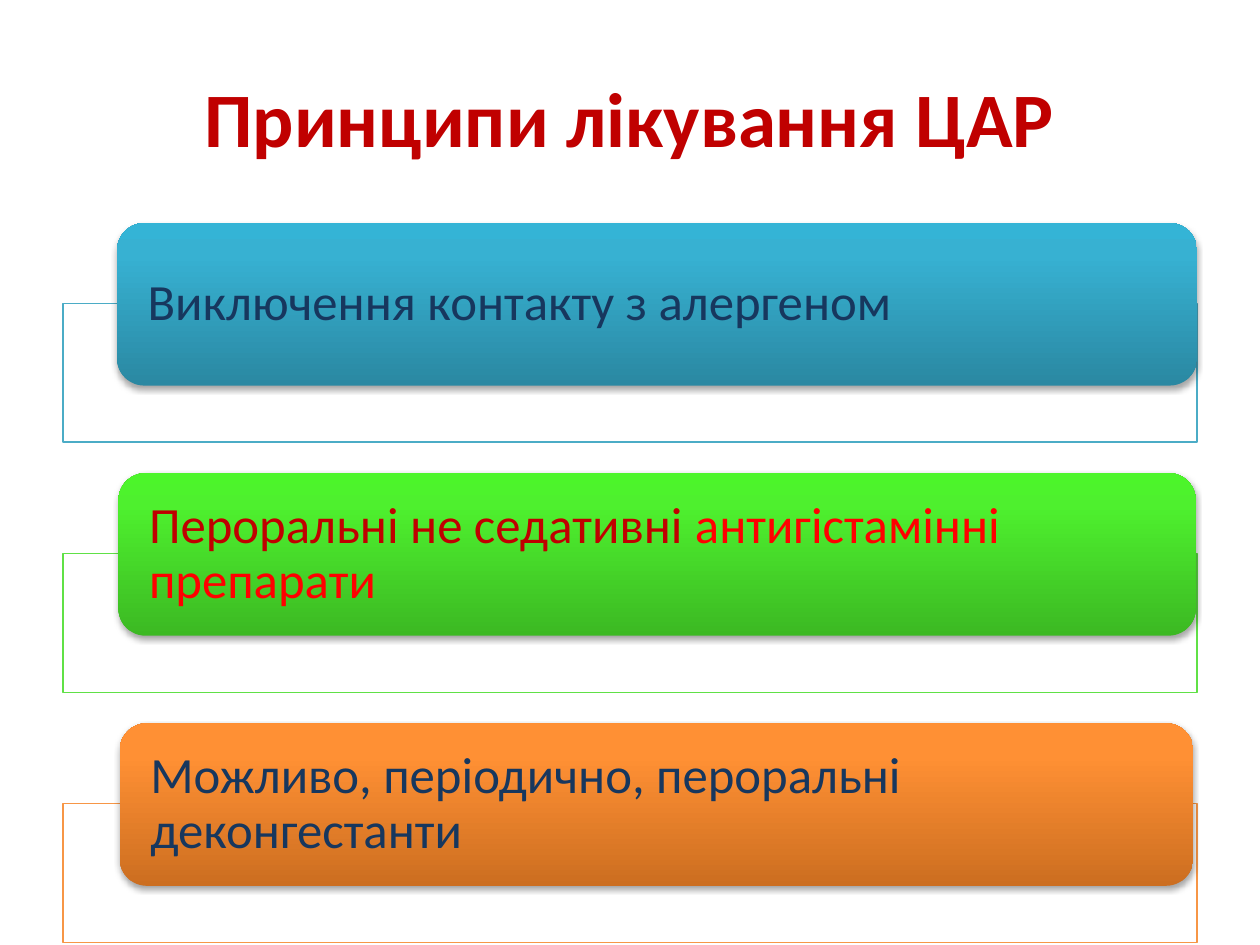
from copy import deepcopy

from lxml.etree import SubElement
from pptx import Presentation
from pptx.dml.color import RGBColor as Rgb
from pptx.enum.shapes import MSO_SHAPE as Shape
from pptx.enum.text import MSO_ANCHOR as Anchor, PP_ALIGN as Align
from pptx.oxml.ns import qn
from pptx.util import Inches, Pt

COLORS = {
    "white": "FFFFFF",
    "black": "000000",
    "crimson": "C00000",
    "red": "FF0000",
    "navy": "17375E",
}
FONT = "Calibri"
MARGIN = 0.5
CONTENT_WIDTH = 9
FIRST_FRAME_TOP = 2.41
ROW_PITCH = 1.985
FRAME_HEIGHT = 1.1
CARD_RISE = 0.64
CARD_HEIGHT = 1.29
STOP_POSITIONS = (0, 0.8, 1)

PRINCIPLES = [
    (0.93, 8.57, "4BACC6", ("2A88A2", "37B1D2", "34B4D6"),
     [("Виключення контакту з алергеном", "navy")]),
    (0.94, 8.55, "60E146", ("3CB923", "4EF02E", "4CF52A"),
     [("Пероральні не седативні ", "crimson"), ("антигістамінні препарати", "red")]),
    (0.95, 8.52, "F79646", ("CC6E20", "FF9034", "FF9136"),
     [("Можливо, періодично, пероральні деконгестанти", "navy")]),
]


def format_run(run, size, color, bold=False):
    run.font.name = FONT
    run.font.size = Pt(size)
    run.font.bold = bold
    run.font.color.rgb = Rgb.from_string(COLORS[color])


def set_title(slide, text):
    title = slide.shapes.title
    title.left, title.top = Inches(MARGIN), Inches(0.3)
    title.width, title.height = Inches(CONTENT_WIDTH), Inches(1.25)
    title.text_frame.text = text
    title.text_frame.vertical_anchor = Anchor.MIDDLE
    paragraph = title.text_frame.paragraphs[0]
    paragraph.alignment = Align.CENTER
    format_run(paragraph.runs[0], 44, "crimson", bold=True)


def add_block(slide, kind, left, top, width, height):
    shape = slide.shapes.add_shape(
        kind, Inches(left), Inches(top), Inches(width), Inches(height))
    shape.shadow.inherit = False
    return shape


def add_frame(slide, top, line_color):
    frame = add_block(slide, Shape.RECTANGLE, MARGIN, top, CONTENT_WIDTH, FRAME_HEIGHT)
    frame.fill.solid()
    frame.fill.fore_color.rgb = Rgb.from_string(COLORS["white"])
    color = frame.element.spPr.find(qn("a:solidFill")).find(qn("a:srgbClr"))
    SubElement(color, qn("a:alpha"), val="90000")
    frame.line.color.rgb = Rgb.from_string(line_color)
    frame.line.width = Pt(0.75)


def fill_gradient(shape, colors):
    shape.fill.gradient()
    shape.fill.gradient_angle = 90
    stop_list = shape.element.spPr.find(qn("a:gradFill")).find(qn("a:gsLst"))
    stop_list.append(deepcopy(stop_list[0]))
    for stop, position, color in zip(shape.fill.gradient_stops, STOP_POSITIONS, colors):
        stop.position = position
        stop.color.rgb = Rgb.from_string(color)


def add_shadow(shape):
    effects = shape.element.spPr.find(qn("a:effectLst"))
    shadow = SubElement(effects, qn("a:outerShdw"), blurRad=str(Pt(3.1)),
                        dist=str(Pt(1.8)), dir="5400000", rotWithShape="0")
    color = SubElement(shadow, qn("a:srgbClr"), val=COLORS["black"])
    SubElement(color, qn("a:alpha"), val="35000")


def add_card(slide, left, top, width, gradient, parts):
    card = add_block(slide, Shape.ROUNDED_RECTANGLE, left, top, width, CARD_HEIGHT)
    fill_gradient(card, gradient)
    card.line.fill.background()
    add_shadow(card)
    text_frame = card.text_frame
    text_frame.word_wrap = True
    text_frame.vertical_anchor = Anchor.MIDDLE
    text_frame.margin_left = text_frame.margin_right = Inches(0.18)
    text_frame.margin_top = text_frame.margin_bottom = 0
    paragraph = text_frame.paragraphs[0]
    paragraph.alignment = Align.LEFT
    paragraph.line_spacing = 0.9
    for text, color in parts:
        run = paragraph.add_run()
        run.text = text
        format_run(run, 29, color)


def main():
    presentation = Presentation()
    presentation.slide_width, presentation.slide_height = Inches(10), Inches(7.5)
    slide = presentation.slides.add_slide(presentation.slide_layouts[5])
    set_title(slide, "Принципи лікування ЦАР")
    for row, (left, width, line_color, gradient, parts) in enumerate(PRINCIPLES):
        top = FIRST_FRAME_TOP + row * ROW_PITCH
        add_frame(slide, top, line_color)
        add_card(slide, left, top - CARD_RISE, width, gradient, parts)
    presentation.save("out.pptx")


if __name__ == "__main__":
    main()
